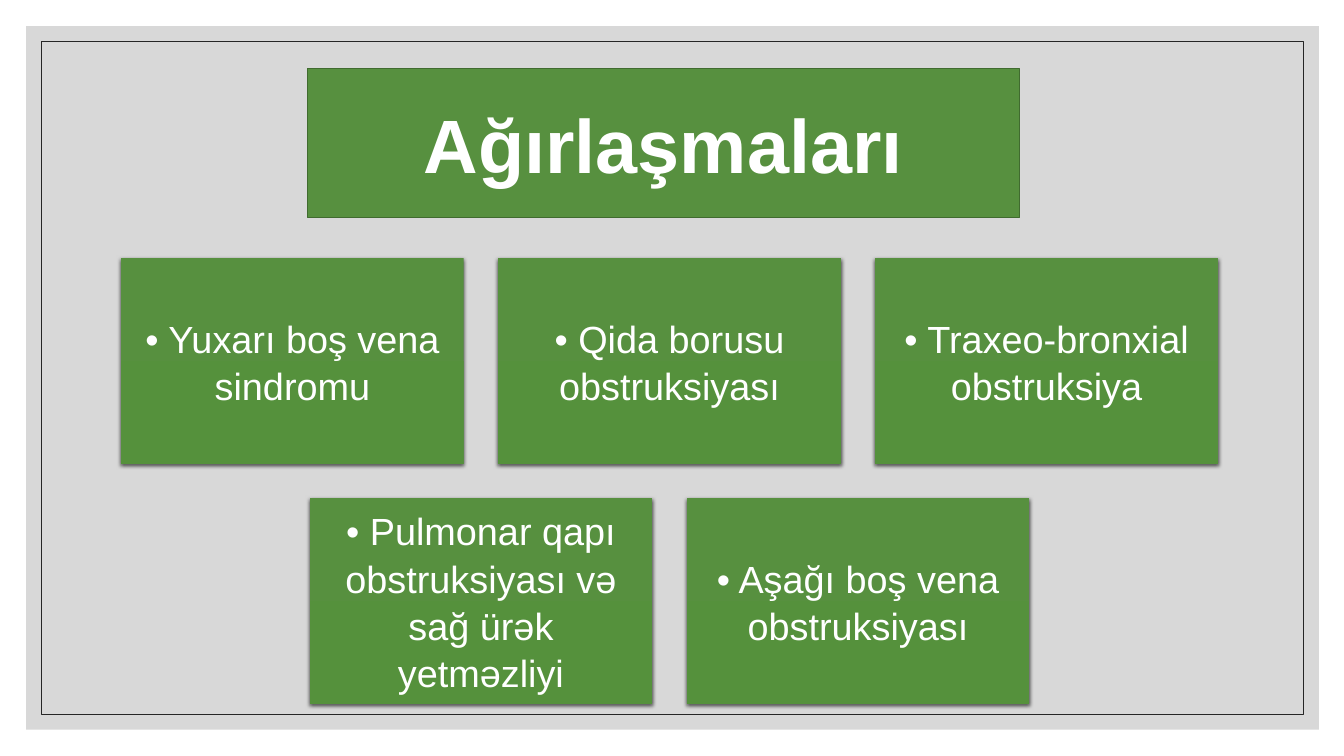
"""Build a slide of five complication cards under a rounded title."""
from lxml import etree
from pptx import Presentation
from pptx import util as u
from pptx.dml.color import RGBColor
from pptx.enum import shapes, text
from pptx.oxml import parse_xml
from pptx.oxml.ns import nsdecls, qn


def rgb(value):
    return RGBColor.from_string(value)


class Deck:
    FONT = "Arial"
    GREEN, GREEN_END, EDGE = "57903F", "55913C", "406B2F"
    WHITE, GREY, DARK = "FFFFFF", "BFBFBF", "262626"

    def __init__(self):
        self.prs = Presentation()
        self.prs.slide_width = u.Inches(13.33)
        self.prs.slide_height = u.Inches(7.5)
        self.s = self.prs.slides.add_slide(self.prs.slide_layouts[5])

    def rect(self, x, y, w, h):
        sp = self.s.shapes.add_shape(
            shapes.MSO_SHAPE.RECTANGLE, *map(u.Inches, (x, y, w, h)))
        sp.shadow.inherit = False
        sp.fill.background()
        sp.line.fill.background()
        return sp

    def label(self, sp, words, size, bold=False):
        tf = sp.text_frame
        tf.word_wrap = True
        tf.auto_size = text.MSO_AUTO_SIZE.NONE
        tf.vertical_anchor = text.MSO_ANCHOR.MIDDLE
        p = tf.paragraphs[0]
        p.text = words
        p.alignment = text.PP_ALIGN.CENTER
        p.font.name, p.font.size, p.font.bold = self.FONT, u.Pt(size), bold
        p.font.color.rgb = rgb(self.WHITE)
        return tf

    def panel(self, x, y, w, h):
        sp = self.rect(x, y, w, h)
        sp.fill.solid()
        sp.fill.fore_color.rgb = rgb(self.GREY)
        color = sp._element.spPr.find(qn("a:solidFill"))[0]
        etree.SubElement(color, qn("a:alpha"), val="60000")

    def frame(self, x, y, w, h):
        sp = self.rect(x, y, w, h)
        sp.line.color.rgb = rgb(self.DARK)
        sp.line.width = u.Pt(0.5)

    def card(self, x, y, w, h, words):
        sp = self.rect(x, y, w, h)
        sp.fill.gradient()
        sp.fill.gradient_angle = 270
        for stop, color in zip(sp.fill.gradient_stops, (self.GREEN, self.GREEN_END)):
            stop.color.rgb = rgb(color)
            stop.position = float(color == self.GREEN_END)
        effects = sp._element.spPr.find(qn("a:effectLst"))
        effects.append(parse_xml(
            f'<a:outerShdw {nsdecls("a")} blurRad="{u.Pt(3)}" dist="{u.Pt(1)}" '
            'dir="5400000" rotWithShape="0"><a:srgbClr val="000000">'
            '<a:alpha val="63000"/></a:srgbClr></a:outerShdw>'))
        tf = self.label(sp, words, 27)
        tf.paragraphs[0].line_spacing = 1.04
        tf.margin_left = tf.margin_right = u.Inches(0.11)
        tf.margin_top = tf.margin_bottom = u.Inches(0.11)

    def title(self, x, y, w, h, words):
        sp = self.s.shapes.title
        sp.left, sp.top, sp.width, sp.height = map(u.Inches, (x, y, w, h))
        sp._element.spPr.append(parse_xml(
            f'<a:prstGeom {nsdecls("a")} prst="roundRect"><a:avLst/></a:prstGeom>'))
        sp.fill.solid()
        sp.fill.fore_color.rgb = rgb(self.GREEN)
        sp.line.color.rgb = rgb(self.EDGE)
        sp.line.width = u.Pt(1)
        self.label(sp, words, 54, bold=True)
        self.s.shapes._spTree.append(sp._element)


def main():
    deck = Deck()
    deck.panel(0.26, 0.26, 12.82, 6.98)
    deck.frame(0.41, 0.41, 12.52, 6.68)

    rows = [
        ["Yuxarı boş vena sindromu", "Qida borusu obstruksiyası",
         "Traxeo-bronxial obstruksiya"],
        ["Pulmonar qapı obstruksiyası və sağ ürək yetməzliyi",
         "Aşağı boş vena obstruksiyası"],
    ]
    card_w, card_h, gap, center, top = 3.4, 2.04, 0.34, 6.64, 2.56
    for i, row in enumerate(rows):
        left = center - (len(row) * (card_w + gap) - gap) / 2
        for j, words in enumerate(row):
            deck.card(left + j * (card_w + gap), top + i * (card_h + gap),
                      card_w, card_h, f"• {words}")

    deck.title(3.05, 0.68, 7.06, 1.48, "Ağırlaşmaları")
    deck.prs.save("out.pptx")


if __name__ == "__main__":
    main()
